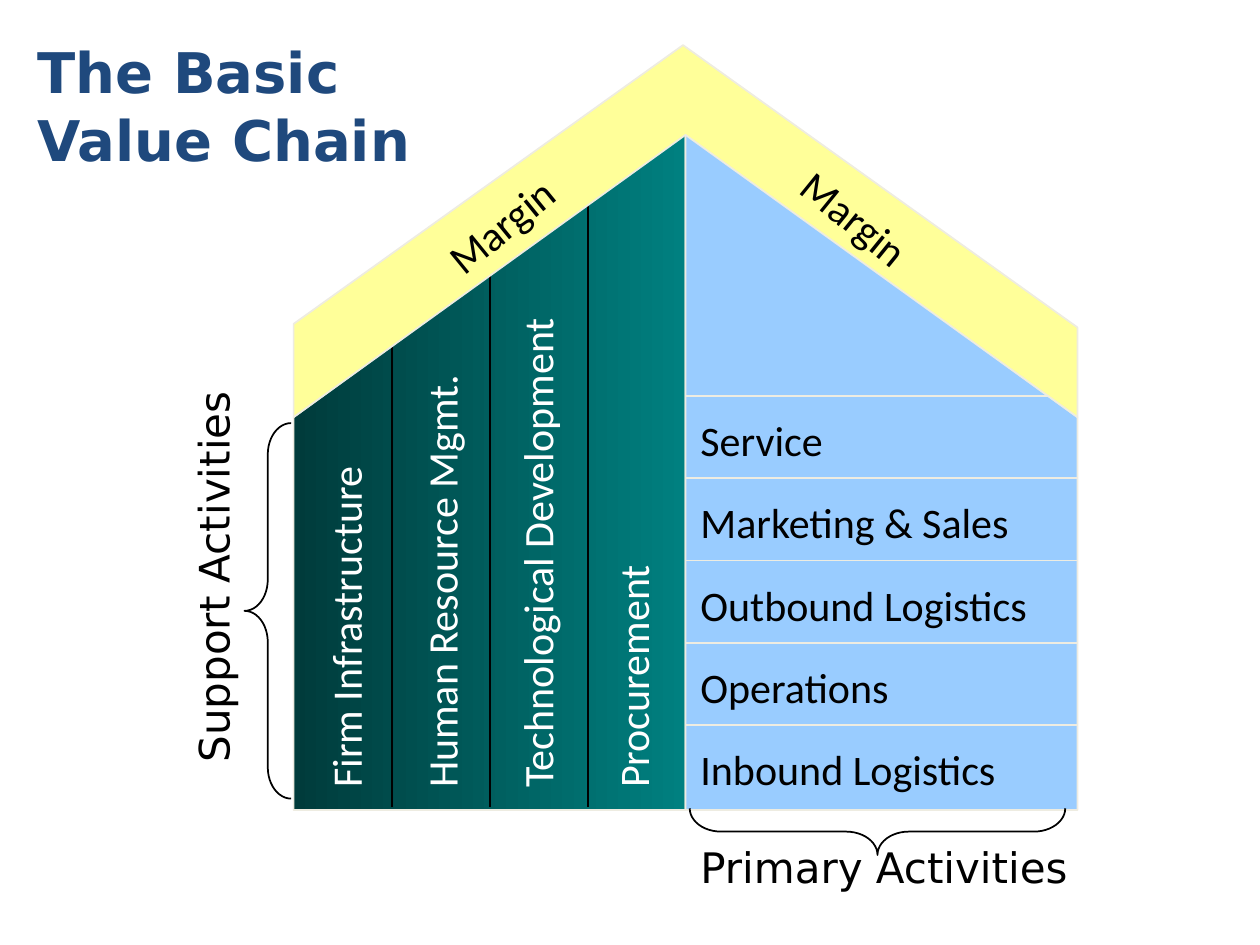
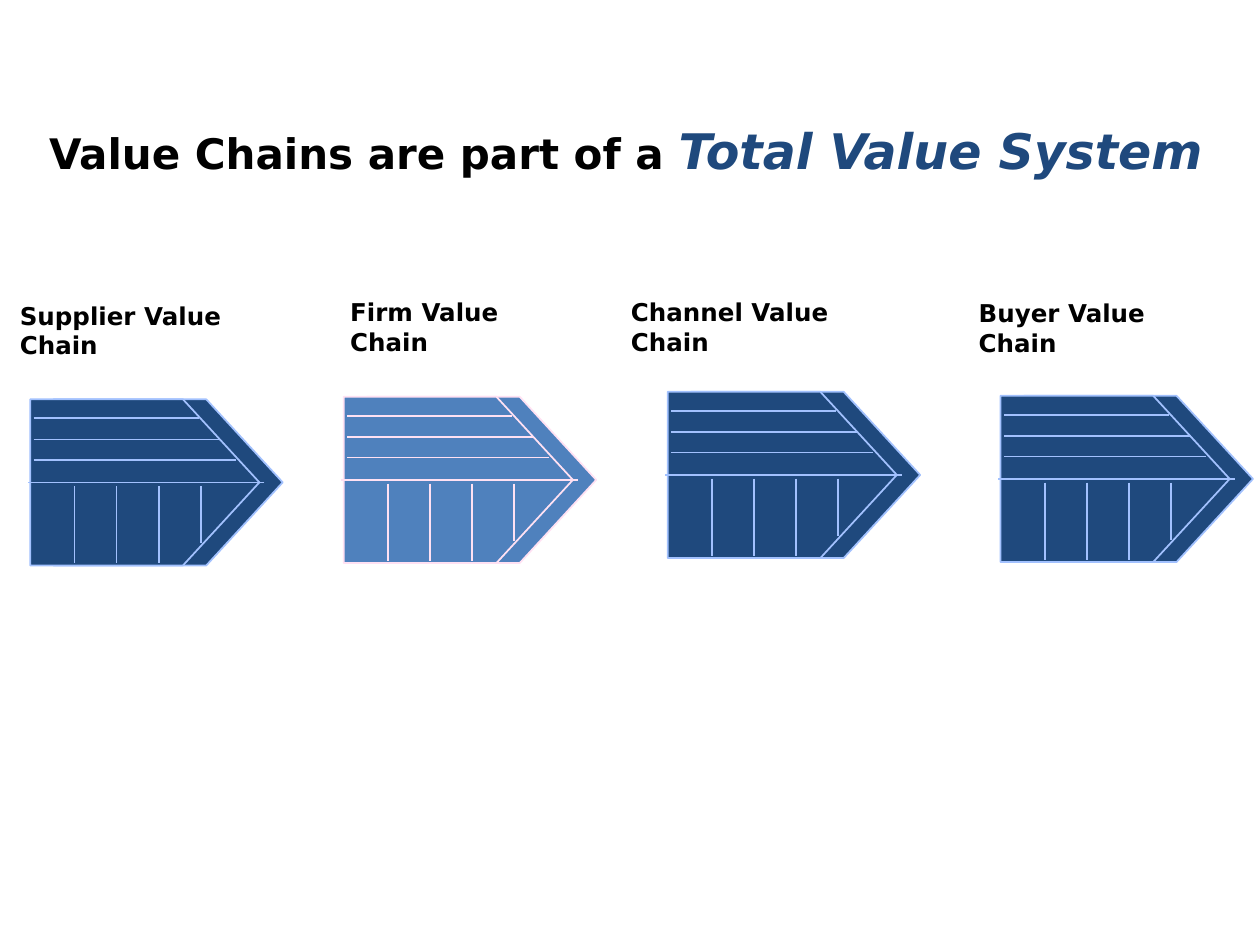
"""Build two slides on the value chain and the total value system."""
from lxml import etree
from pptx import Presentation
from pptx import util as u
from pptx.dml.color import RGBColor
from pptx.enum import shapes, text
from pptx.oxml.ns import qn

BODY, HEADING = "Calibri", "DejaVu Sans"
BLACK, WHITE, NAVY, BLUE = "000000", "FFFFFF", "1F497D", "4F81BD"
SKY, YELLOW, CREAM = "99CCFF", "FFFF99", "EEECE1"
DARK_TEAL, TEAL = "003B3B", "008080"
PALE_BLUE, PALE_PINK = "A2C1FE", "FFE1F3"

LEFT, MIDDLE, RIGHT = 5.92, 13.82, 21.72
PEAK, EAVES, FLOOR = 2.67, 8.41, 16.33
LABEL_HEIGHT = 1.27
ROW_STEP = 1.66
PLATE_WIDTH, PLATE_HEIGHT = 4.62, 3.35

SUPPORT = [("Firm Infrastructure", 7.42), ("Human Resource Mgmt.", 9.7),
           ("Technological Development", 10.97), ("Procurement", 5.36)]
PRIMARY = [("Service", 3.33), ("Marketing & Sales", 7.39),
           ("Outbound Logistics", 7.77), ("Operations", 4.65),
           ("Inbound Logistics", 7.11)]
CHAINS = [
    ("Supplier Value Chain", (0.15, 5.94, 5.7), (0.61, 8.05), NAVY, PALE_BLUE),
    ("Firm Value Chain", (6.81, 5.87, 4.7), (6.93, 8), BLUE, PALE_PINK),
    ("Channel Value Chain", (12.47, 5.87, 5.7), (13.46, 7.9), NAVY, PALE_BLUE),
    ("Buyer Value Chain", (19.48, 5.89, 5.1), (20.17, 7.98), NAVY, PALE_BLUE),
]


def rgb(hex_colour):
    """Turn a hex string into a colour."""
    return RGBColor.from_string(hex_colour)


def cm(*lengths):
    """Turn several numbers into centimetre lengths."""
    return [u.Cm(length) for length in lengths]


def outline(part, colour):
    """Give a part a one-point line and no shadow."""
    part.line.color.rgb = rgb(colour)
    part.line.width = u.Pt(1)


def paint(part, fill, edge):
    """Fill and outline a shape; no fill colour leaves it hollow."""
    part.shadow.inherit = False
    if fill:
        part.fill.solid()
        part.fill.fore_color.rgb = rgb(fill)
    else:
        part.fill.background()
    outline(part, edge)


def rule(parent, start, end, colour):
    """Draw a straight line between two points."""
    line = parent.add_connector(shapes.MSO_CONNECTOR.STRAIGHT,
                                *cm(*start), *cm(*end))
    outline(line, colour)
    etree.SubElement(line._element.spPr, qn("a:effectLst"))


def polygon(parent, corners, fill):
    """Draw a closed outline through the corners."""
    first, *rest = [cm(*corner) for corner in corners]
    builder = parent.build_freeform(*first)
    builder.add_line_segments(rest, close=True)
    outlined = builder.convert_to_shape()
    paint(outlined, fill, CREAM)
    return outlined


def add_run(paragraph, words, font, size, colour, bold=False, italic=False):
    """Append one formatted run."""
    run = paragraph.add_run()
    run.text = words
    run.font.name, run.font.size = font, u.Pt(size)
    run.font.color.rgb = rgb(colour)
    run.font.bold, run.font.italic = bold, italic
    return run


def text_frame(slide, box, angle=0, wrap=False):
    """Add an empty text box and return its frame."""
    label = slide.shapes.add_textbox(*cm(*box))
    label.rotation = angle
    frame = label.text_frame
    frame.word_wrap = wrap
    frame.auto_size = text.MSO_AUTO_SIZE.SHAPE_TO_FIT_TEXT
    return frame


def label(slide, words, box, font=BODY, size=24, colour=BLACK, angle=0,
          bold=False, wrap=False):
    """Write a one-run label."""
    frame = text_frame(slide, box, angle, wrap)
    add_run(frame.paragraphs[0], words, font, size, colour, bold)


def soft_shadow(run):
    """Put a pale shadow behind a run."""
    fill = run.font._element.find(qn("a:solidFill"))
    effects = etree.Element(qn("a:effectLst"))
    shadow = etree.SubElement(effects, qn("a:outerShdw"), blurRad="38100",
                              dist="38100", dir="2700000", algn="tl")
    etree.SubElement(shadow, qn("a:srgbClr"), val="C0C0C0")
    fill.addnext(effects)


def brace(slide, box, angle=0):
    """Draw a mirrored curly brace."""
    curly = slide.shapes.add_shape(shapes.MSO_SHAPE.RIGHT_BRACE, *cm(*box))
    curly.adjustments[0] = 0.671
    curly.rotation = angle
    curly._element.spPr.find(qn("a:xfrm")).set("flipH", "1")
    paint(curly, None, BLACK)


def house(slide):
    """Draw the two wings, their dividers and the margin roof."""
    parts = slide.shapes.add_group_shape().shapes
    support, _ = [
        polygon(parts, [(side, FLOOR), (side, EAVES), (MIDDLE, PEAK),
                        (MIDDLE, FLOOR)], SKY)
        for side in (LEFT, RIGHT)]
    support.fill.gradient()
    support.fill.gradient_angle = 0
    for stop, colour in zip(support.fill.gradient_stops, (DARK_TEAL, TEAL)):
        stop.color.rgb = rgb(colour)
    for column, top in enumerate((6.93, 5.56, 4.09)):
        x = 7.9 + 1.98 * column
        rule(parts, (x, 16.26), (x, top), BLACK)
    for row in range(len(PRIMARY)):
        y = 7.98 + ROW_STEP * row
        rule(parts, (MIDDLE, y), (RIGHT if row else 21.16, y), CREAM)
    polygon(parts, [(LEFT, EAVES), (LEFT, 6.53), (13.77, 0.91), (RIGHT, 6.6),
                    (RIGHT, EAVES), (MIDDLE, 2.72)], YELLOW)


def value_chain_slide(slide):
    """Build the basic value chain."""
    house(slide)
    for row, (activity, width) in enumerate(PRIMARY):
        label(slide, activity,
              (13.87, 8.23 + ROW_STEP * row, width, LABEL_HEIGHT))
    for column, (activity, length) in enumerate(SUPPORT):
        centre_x, centre_y = 6.96 + 1.93 * column, 16.13 - length / 2
        label(slide, activity,
              (centre_x - length / 2, centre_y - LABEL_HEIGHT / 2,
               length, LABEL_HEIGHT), colour=WHITE, angle=270)
    label(slide, "Margin", (8.61, 3.86, 3.1, LABEL_HEIGHT), angle=320.8)
    label(slide, "Margin", (15.75, 3.81, 3.1, LABEL_HEIGHT), angle=39.2)
    label(slide, "Primary Activities", (13.87, 16.84, 7.95, LABEL_HEIGHT),
          HEADING)
    label(slide, "Support Activities", (0.28, 10.97, 8.03, LABEL_HEIGHT),
          HEADING, angle=270)
    brace(slide, (4.93, 8.53, 0.94, 7.57))
    brace(slide, (17.22, 12.98, 0.94, 7.57), 270)
    title = text_frame(slide, (0.51, 0.64, 8.03, 2.97))
    add_run(title.paragraphs[0], "The Basic", HEADING, 32, NAVY, True)
    add_run(title.add_paragraph(), "Value Chain", HEADING, 32, NAVY, True)


def small_chain(slide, origin, fill, edge):
    """Draw one small value chain lying on its side."""
    left, top = origin
    parts = slide.shapes.add_group_shape().shapes
    for shift in (0.47, 0):
        plate = parts.add_shape(
            shapes.MSO_SHAPE.PENTAGON,
            *cm(left + shift, top, PLATE_WIDTH, PLATE_HEIGHT))
        plate.adjustments[0] = 0.46
        paint(plate, fill, edge)
    middle = top + PLATE_HEIGHT / 2
    rule(parts, (left + 4.72, middle), (left - 0.05, middle), edge)
    for column, depth in enumerate((3.3, 3.3, 3.3, 2.9)):
        x = left + 0.89 + 0.85 * column
        rule(parts, (x, top + 1.75), (x, top + depth), edge)
    for drop, reach in ((0.38, 3.4), (0.81, 3.83), (1.22, 4.14)):
        rule(parts, (left + 0.07, top + drop), (left + reach, top + drop), edge)


def value_system_slide(slide):
    """Build the row of linked value chains."""
    for _, _, origin, fill, edge in CHAINS:
        small_chain(slide, origin, fill, edge)
    title = text_frame(slide, (0.74, 2.31, 23.8, 1.42)).paragraphs[0]
    soft_shadow(add_run(title, "Value Chains are part of a ", HEADING, 24,
                        BLACK, True))
    soft_shadow(add_run(title, "Total Value System", HEADING, 28, NAVY,
                        True, True))
    for name, place, *_ in CHAINS:
        label(slide, name, (*place, 0.84), HEADING, 14, bold=True, wrap=True)


def main():
    """Create and save the presentation."""
    deck = Presentation()
    deck.slide_width, deck.slide_height = cm(25.4, 19.05)
    blank = deck.slide_layouts[6]
    for build in (value_chain_slide, value_system_slide):
        build(deck.slides.add_slide(blank))
    deck.save("out.pptx")


if __name__ == "__main__":
    main()
